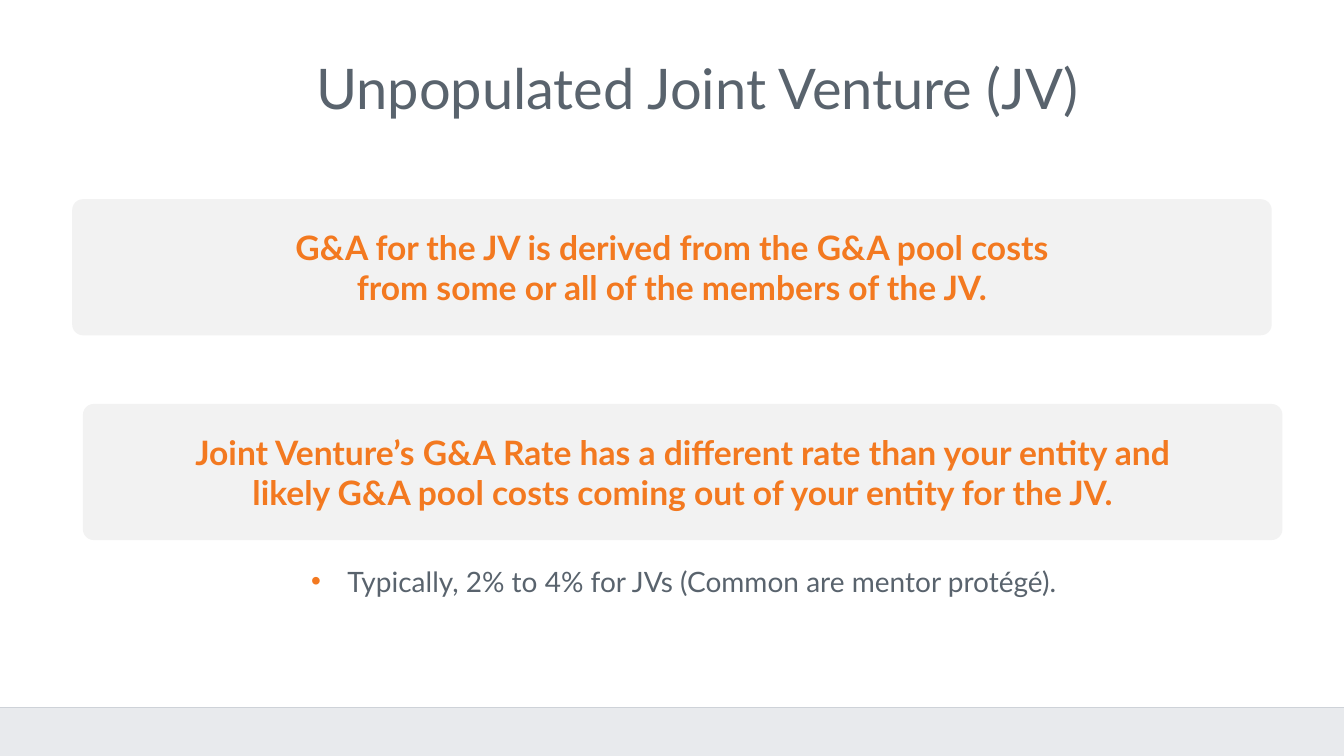
from lxml import etree
from pptx import Presentation
from pptx.dml.color import RGBColor
from pptx.enum.shapes import MSO_CONNECTOR, MSO_SHAPE
from pptx.enum.text import MSO_ANCHOR, PP_ALIGN
from pptx.oxml.ns import qn
from pptx.util import Cm, Pt

RECTANGLE = MSO_SHAPE.RECTANGLE
ROUNDED = MSO_SHAPE.ROUNDED_RECTANGLE
STRAIGHT = MSO_CONNECTOR.STRAIGHT
CENTER = PP_ALIGN.CENTER
TOP, MIDDLE = MSO_ANCHOR.TOP, MSO_ANCHOR.MIDDLE

FONT = "Lato"
ORANGE, SLATE = "F37920", "59636D"
CARD_GRAY, FOOTER_GRAY, RULE_GRAY = "F2F2F2", "E8EAED", "CED2D8"

SLIDE_WIDTH, SLIDE_HEIGHT = 33.87, 19.05
CONTENT_WIDTH = 30.23
CARD_HEIGHT = 3.43

POOL_LINES = [
    "G&A for the JV is derived from the G&A pool costs",
    "from some or all of the members of the JV.",
]
RATE_LINES = [
    "Joint Venture’s G&A Rate has a different rate than your entity and",
    "likely G&A pool costs coming out of your entity for the JV.",
]


def rgb(hex_color):
    return RGBColor.from_string(hex_color)


def add_panel(slide, preset, box, color):
    """Add a flat filled shape without outline or shadow."""
    panel = slide.shapes.add_shape(preset, *map(Cm, box))
    panel.shadow.inherit = False
    panel.fill.solid()
    panel.fill.fore_color.rgb = rgb(color)
    panel.line.fill.background()
    return panel


def write_centered(frame, lines, size, color, bold=False, spacing=None):
    frame.word_wrap = True
    frame.text = "\n".join(lines)
    for paragraph in frame.paragraphs:
        paragraph.alignment = CENTER
        paragraph.line_spacing = spacing
        for run in paragraph.runs:
            run.font.name = FONT
            run.font.size = Pt(size)
            run.font.bold = bold
            run.font.color.rgb = rgb(color)


def add_footer(slide, box):
    left, top, width, _ = box
    add_panel(slide, RECTANGLE, box, FOOTER_GRAY)
    rule = slide.shapes.add_connector(
        STRAIGHT, Cm(left), Cm(top), Cm(left + width), Cm(top))
    rule.line.color.rgb = rgb(RULE_GRAY)
    rule.line.width = Pt(0.75)
    etree.SubElement(rule._element.spPr, qn("a:effectLst"))


def add_title(slide, box, title):
    frame = slide.shapes.add_textbox(*map(Cm, box)).text_frame
    frame.vertical_anchor = MIDDLE
    write_centered(frame, [title], 40, SLATE, spacing=0.9)


def add_card(slide, box, lines):
    card = add_panel(slide, ROUNDED, box, CARD_GRAY)
    card.adjustments[0] = 0.08
    frame = card.text_frame
    frame.vertical_anchor = MIDDLE
    frame.margin_left = frame.margin_right = Cm(0.51)
    frame.margin_top = frame.margin_bottom = Cm(0.51)
    write_centered(frame, lines, 24, ORANGE, bold=True)


def add_bullet_note(slide, box, note):
    frame = slide.shapes.add_textbox(*map(Cm, box)).text_frame
    frame.vertical_anchor = TOP
    write_centered(frame, [note], 20, SLATE, spacing=1.2)
    paragraph = frame.paragraphs[0]
    paragraph.level = 1
    properties = paragraph._p.get_or_add_pPr()
    properties.set("marL", str(Cm(0.97)))
    properties.set("indent", str(Cm(-0.91)))
    bullet_color = etree.SubElement(properties, qn("a:buClr"))
    etree.SubElement(bullet_color, qn("a:srgbClr"), val=ORANGE)
    etree.SubElement(properties, qn("a:buFont"), typeface="Arial")
    etree.SubElement(properties, qn("a:buChar"), char="•")


def main():
    presentation = Presentation()
    presentation.slide_width = Cm(SLIDE_WIDTH)
    presentation.slide_height = Cm(SLIDE_HEIGHT)
    slide = presentation.slides.add_slide(presentation.slide_layouts[6])

    add_footer(slide, (0, 17.83, SLIDE_WIDTH, SLIDE_HEIGHT - 17.83))
    add_title(slide, (2.46, 1.52, CONTENT_WIDTH, 1.57),
              "Unpopulated Joint Venture (JV)")
    add_card(slide, (1.82, 5.02, CONTENT_WIDTH, CARD_HEIGHT), POOL_LINES)
    add_card(slide, (2.09, 10.18, CONTENT_WIDTH, CARD_HEIGHT), RATE_LINES)
    add_bullet_note(slide, (2.09, 13.92, CONTENT_WIDTH, 1.55),
                    "Typically, 2% to 4% for JVs (Common are mentor protégé).")

    presentation.save("out.pptx")


if __name__ == "__main__":
    main()
